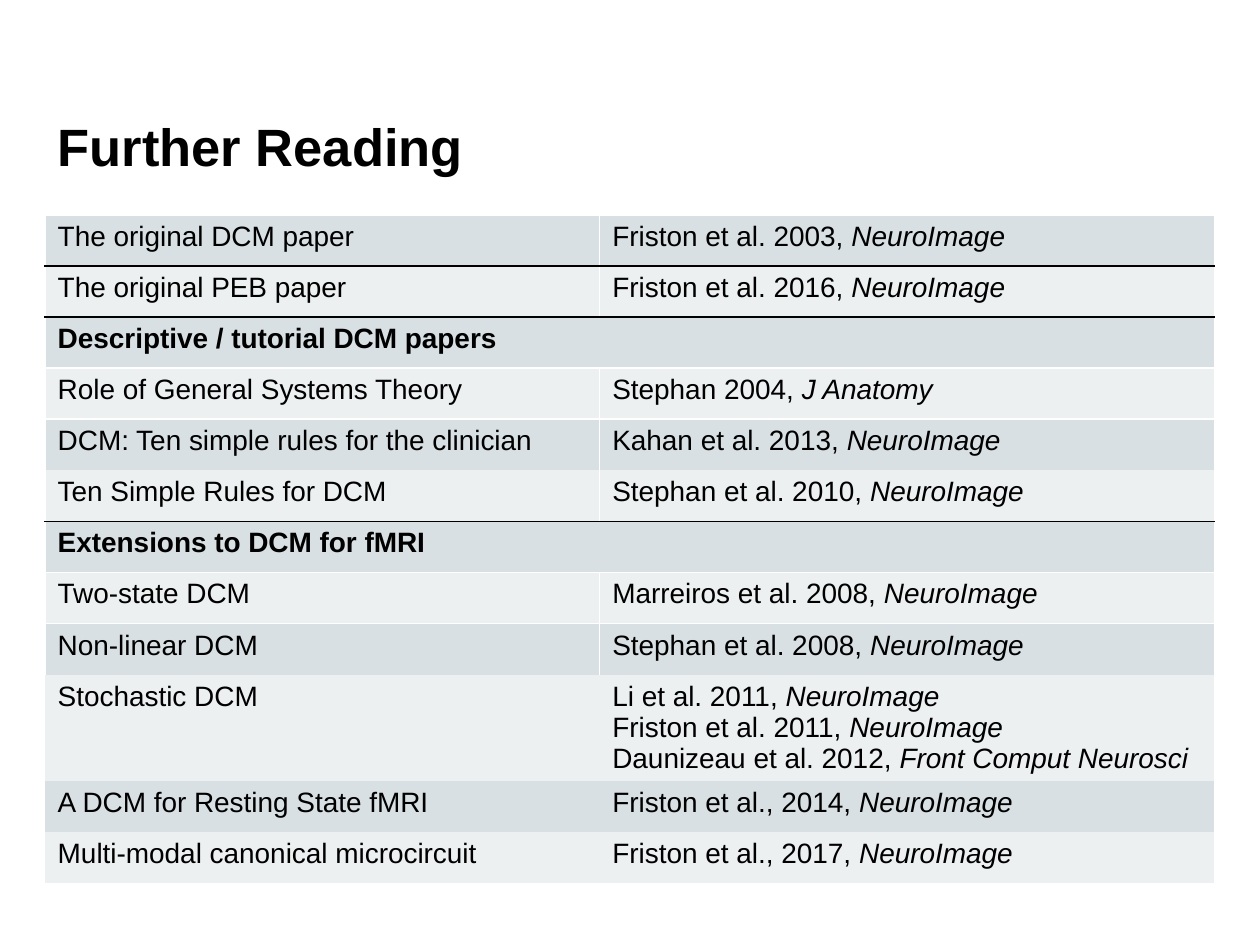
from dataclasses import dataclass

from lxml import etree
from pptx import Presentation
from pptx.dml.color import RGBColor
from pptx.enum import text
from pptx.oxml import ns
from pptx.util import Cm, Pt


@dataclass(frozen=True)
class Theme:
    font: str = "Arial"
    ink: str = "000000"
    white: str = "FFFFFF"
    bands: tuple = ("D8E0E3", "ECF0F1")
    title_size: int = 30
    body_size: int = 16
    line_width: int = 1


THEME = Theme()
LEFT, WIDTH = Cm(0.91), Cm(23.57)
COLUMN_WIDTHS = (Cm(11.18), Cm(12.39))
ROW_HEIGHT = Cm(1.03)

READING = [
    ("The original DCM paper", [("Friston et al. 2003, ", "NeuroImage")]),
    ("The original PEB paper", [("Friston et al. 2016, ", "NeuroImage")]),
    ("Descriptive / tutorial DCM papers", []),
    ("Role of General Systems Theory", [("Stephan 2004, ", "J Anatomy")]),
    ("DCM: Ten simple rules for the clinician", [("Kahan et al. 2013, ", "NeuroImage")]),
    ("Ten Simple Rules for DCM", [("Stephan et al. 2010, ", "NeuroImage")]),
    ("Extensions to DCM for fMRI", []),
    ("Two-state DCM", [("Marreiros et al. 2008, ", "NeuroImage")]),
    ("Non-linear DCM", [("Stephan et al. 2008, ", "NeuroImage")]),
    ("Stochastic DCM", [
        ("Li et al. 2011, ", "NeuroImage"),
        ("Friston et al. 2011, ", "NeuroImage"),
        ("Daunizeau et al. 2012, ", "Front Comput Neurosci"),
    ]),
    ("A DCM for Resting State fMRI", [("Friston et al., 2014, ", "NeuroImage")]),
    ("Multi-modal canonical microcircuit", [("Friston et al., 2017, ", "NeuroImage")]),
]
BLACK_RULES = {1, 2, 6}
WHITE_RULES = {0, 3, 4, 7, 8}
RULED_ROWS = 9


def add_text(p, words, size=THEME.body_size, bold=False, italic=False):
    r = p.add_run()
    r.text = words
    r.font.name = THEME.font
    r.font.size = Pt(size)
    r.font.bold = bold
    r.font.italic = italic
    r.font.color.rgb = RGBColor.from_string(THEME.ink)


def rule_color(index):
    if index in BLACK_RULES:
        return THEME.ink
    return THEME.white if index in WHITE_RULES else None


def set_borders(cell, **colors):
    tc_pr = cell._tc.get_or_add_tcPr()
    for position, side in enumerate("LRTB"):
        ln = etree.Element(ns.qn(f"a:ln{side}"), w=str(Pt(THEME.line_width)))
        color = colors[side]
        if color:
            fill = etree.SubElement(ln, ns.qn("a:solidFill"))
            etree.SubElement(fill, ns.qn("a:srgbClr"), val=color)
        else:
            etree.SubElement(ln, ns.qn("a:noFill"))
        tc_pr.insert(position, ln)


def format_cell(cell, row):
    cell.fill.solid()
    cell.fill.fore_color.rgb = RGBColor.from_string(THEME.bands[row % 2])
    side = THEME.white if row < RULED_ROWS else None
    set_borders(cell, L=side, R=side, T=rule_color(row), B=rule_color(row + 1))


def add_title(s, words):
    sp = s.shapes.title
    sp.left, sp.top, sp.width, sp.height = LEFT, Cm(2.13), WIDTH, Cm(1.6)
    tf = sp.text_frame
    tf.word_wrap = True
    tf.auto_size = text.MSO_AUTO_SIZE.NONE
    tf.vertical_anchor = text.MSO_ANCHOR.MIDDLE
    p = tf.paragraphs[0]
    p.alignment = text.PP_ALIGN.LEFT
    add_text(p, words, size=THEME.title_size, bold=True)


def add_citations(tf, citations):
    for i, (authors, journal) in enumerate(citations):
        p = tf.add_paragraph() if i else tf.paragraphs[0]
        add_text(p, authors)
        add_text(p, journal, italic=True)


def add_reading_table(s, reading):
    frame = s.shapes.add_table(len(reading), len(COLUMN_WIDTHS), LEFT, Cm(4.33),
                               WIDTH, ROW_HEIGHT * len(reading))
    table = frame.table
    table.first_row = table.horz_banding = False
    for column, width in zip(table.columns, COLUMN_WIDTHS):
        column.width = width
    for row, (topic, citations) in enumerate(reading):
        table.rows[row].height = ROW_HEIGHT
        topic_cell, source_cell = table.cell(row, 0), table.cell(row, 1)
        for cell in (topic_cell, source_cell):
            format_cell(cell, row)
        if not citations:
            topic_cell.merge(source_cell)
        add_text(topic_cell.text_frame.paragraphs[0], topic, bold=not citations)
        add_citations(source_cell.text_frame, citations)


def main():
    prs = Presentation()
    prs.slide_width, prs.slide_height = Cm(25.4), Cm(19.05)
    s = prs.slides.add_slide(prs.slide_layouts[5])
    add_title(s, "Further Reading")
    add_reading_table(s, READING)
    prs.save("out.pptx")


if __name__ == "__main__":
    main()
